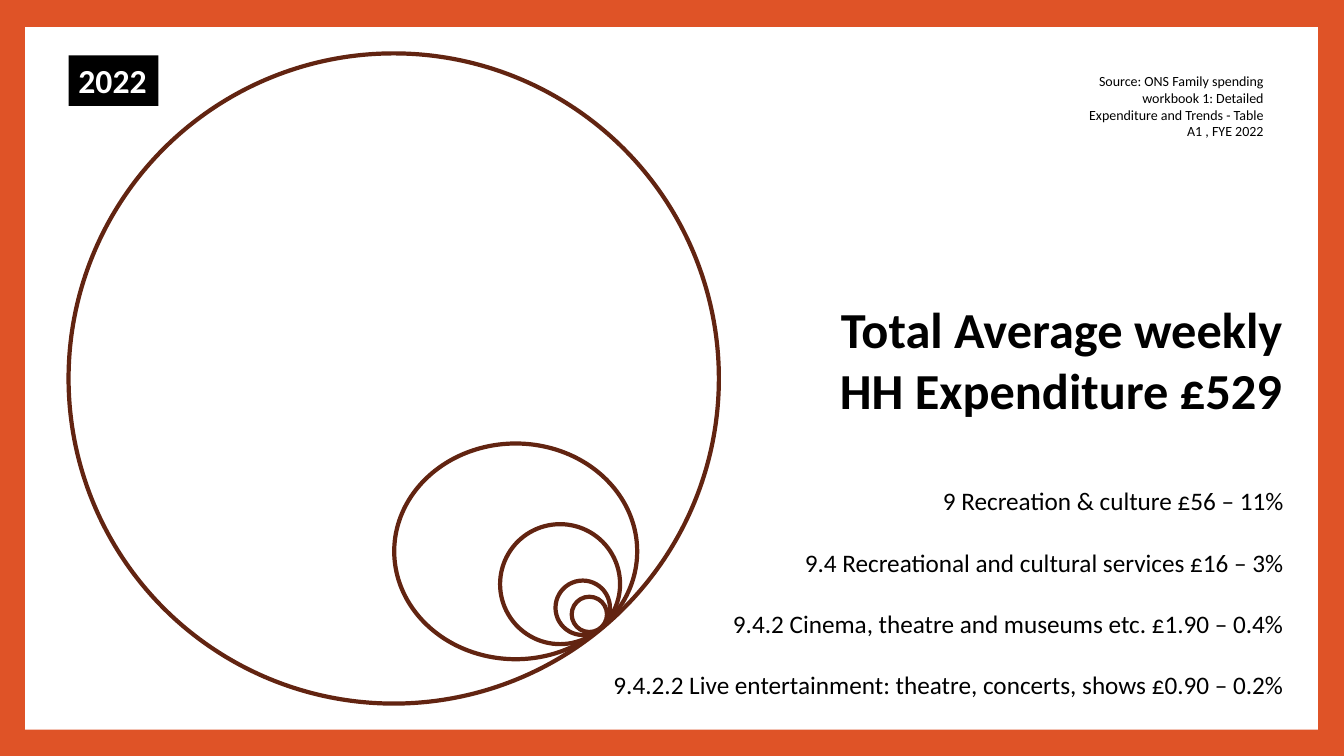
from pptx import Presentation
from pptx.dml.color import RGBColor
from pptx.enum.shapes import MSO_SHAPE
from pptx.enum.text import MSO_ANCHOR, PP_ALIGN
from pptx.util import Inches, Pt

ORANGE = RGBColor(0xDF, 0x53, 0x27)
BROWN = RGBColor(0x62, 0x24, 0x11)
WHITE = RGBColor(0xFF, 0xFF, 0xFF)
BLACK = RGBColor(0x00, 0x00, 0x00)
FONT = "Calibri"

YEAR = "2022"
HEADLINE = "Total Average weekly HH Expenditure £529"
SOURCE = ("Source: ONS Family spending workbook 1: Detailed "
          "Expenditure and Trends - Table A1 , FYE 2022")
CATEGORIES = [
    "9 Recreation & culture £56 – 11%",
    "9.4 Recreational and cultural services £16 – 3%",
    "9.4.2 Cinema, theatre and museums etc. £1.90 – 0.4%",
    "9.4.2.2 Live entertainment: theatre, concerts, shows £0.90 – 0.2%",
]
SPENDING_RINGS = [
    (0.68, 0.53, 6.45, 6.45),
    (3.91, 4.4, 2.41, 2.14),
    (4.96, 5.2, 1.19, 1.19),
    (5.51, 5.76, 0.54, 0.54),
    (5.67, 5.92, 0.35, 0.35),
]


def add_plain_shape(page, kind, bounds, fill=None, line=None):
    """Add a shadowless shape with an optional fill and outline."""
    shape = page.shapes.add_shape(kind, *map(Inches, bounds))
    shape.shadow.inherit = False
    if fill is None:
        shape.fill.background()
    else:
        shape.fill.solid()
        shape.fill.fore_color.rgb = fill
    if line is None:
        shape.line.fill.background()
    else:
        shape.line.color.rgb = line
        shape.line.width = Pt(3)
    return shape


def write_lines(box, lines, size, color=BLACK, bold=False, align=PP_ALIGN.RIGHT, gap=0):
    """Fill a box with one paragraph per line, separated by a gap in points."""
    frame = box.text_frame
    frame.word_wrap = True
    frame.vertical_anchor = MSO_ANCHOR.TOP
    for index, line in enumerate(lines):
        para = frame.add_paragraph() if index else frame.paragraphs[0]
        para.alignment = align
        para.space_before = Pt(gap if index else 0)
        span = para.add_run()
        span.text = line
        span.font.name = FONT
        span.font.size = Pt(size)
        span.font.bold = bold
        span.font.color.rgb = color


def main():
    """Build the household spending slide."""
    deck = Presentation()
    deck.slide_width, deck.slide_height = Inches(13.33), Inches(7.5)
    page = deck.slides.add_slide(deck.slide_layouts[5])
    page.background.fill.solid()
    page.background.fill.fore_color.rgb = ORANGE

    title = page.shapes.title
    title.left, title.top, title.width, title.height = map(Inches, (7.84, 2.91, 4.98, 1.31))
    write_lines(title, [HEADLINE], 36, bold=True)

    panel = add_plain_shape(page, MSO_SHAPE.RECTANGLE, (0.25, 0.27, 12.82, 6.97), fill=WHITE)
    title.element.addprevious(panel.element)

    for bounds in SPENDING_RINGS:
        add_plain_shape(page, MSO_SHAPE.OVAL, bounds, line=BROWN)

    category_box = page.shapes.add_textbox(*map(Inches, (5.39, 4.77, 7.44, 2.52)))
    write_lines(category_box, CATEGORIES, 18, gap=22)

    source_box = page.shapes.add_textbox(*map(Inches, (10.6, 0.67, 2.03, 0.77)))
    write_lines(source_box, [SOURCE], 10)

    year_label = add_plain_shape(page, MSO_SHAPE.RECTANGLE, (0.68, 0.55, 0.89, 0.5), fill=BLACK)
    write_lines(year_label, [YEAR], 24, WHITE, bold=True, align=PP_ALIGN.LEFT)
    year_label.text_frame.word_wrap = False

    deck.save("out.pptx")


if __name__ == "__main__":
    main()
